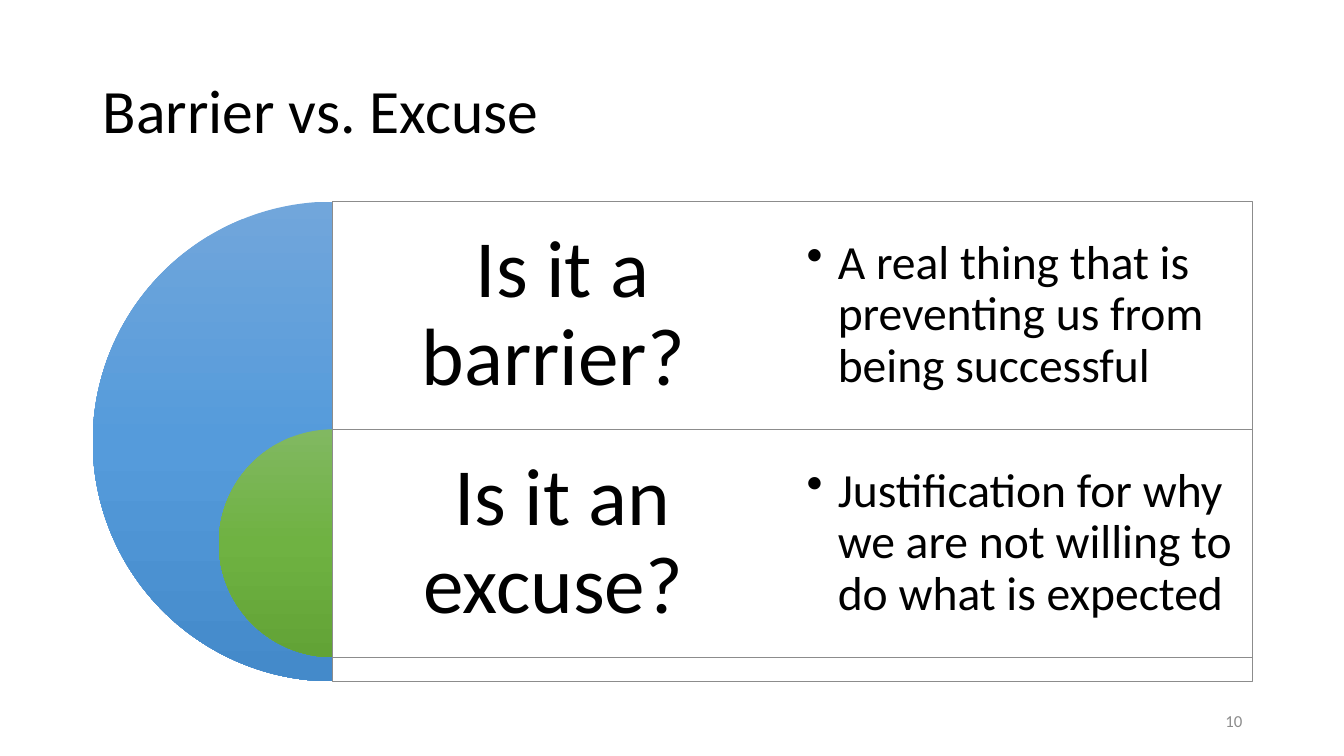
"""Build the "Barrier vs. Excuse" comparison slide."""
from copy import deepcopy
from dataclasses import dataclass

from lxml import etree
from pptx import Presentation
from pptx.dml.color import RGBColor
from pptx.enum.shapes import MSO_SHAPE
from pptx.enum.text import MSO_ANCHOR, PP_ALIGN
from pptx.oxml.ns import qn
from pptx.shapes.autoshape import Shape
from pptx.slide import Slide
from pptx.text.text import TextFrame
from pptx.util import Pt

PIE, RECTANGLE = MSO_SHAPE.PIE, MSO_SHAPE.RECTANGLE
MIDDLE = MSO_ANCHOR.MIDDLE
LEFT, CENTER, RIGHT = PP_ALIGN.LEFT, PP_ALIGN.CENTER, PP_ALIGN.RIGHT

PX = 9144
FONT = "Calibri"
BLACK = RGBColor(0x00, 0x00, 0x00)
WHITE = RGBColor(0xFF, 0xFF, 0xFF)
GREY = RGBColor(0x8C, 0x8C, 0x8C)
BLUES = (RGBColor(0x71, 0xA6, 0xDB), RGBColor(0x55, 0x9B, 0xDB), RGBColor(0x44, 0x8A, 0xCA))
GREENS = (RGBColor(0x81, 0xB8, 0x61), RGBColor(0x6F, 0xB2, 0x42), RGBColor(0x62, 0xA3, 0x36))

AXIS_X, TOP = 330, 200
COLUMN_W, ROW_H = 456, 226
HEADING_INSET, DETAIL_INSET, BULLET_INDENT = 24, 14, 31


@dataclass(frozen=True)
class Topic:
    heading: str
    detail: str
    diameter: int
    gradient: tuple[RGBColor, RGBColor, RGBColor]


TOPICS = (
    Topic("Is it a barrier? ", "A real thing that is preventing us from being successful",
          476, BLUES),
    Topic("Is it an excuse? ", "Justification for why we are not willing to do what is expected",
          ROW_H, GREENS),
)


def write(frame: TextFrame, text: str, size: int, color: RGBColor, align: PP_ALIGN,
          line_spacing: float = 0.9, bullet: bool = False) -> None:
    """Put one formatted run into a vertically centred frame."""
    frame.word_wrap = True
    frame.vertical_anchor = MIDDLE
    paragraph = frame.paragraphs[0]
    if bullet:
        properties = paragraph._p.get_or_add_pPr()
        properties.set("marL", str(BULLET_INDENT * PX))
        properties.set("indent", str(-BULLET_INDENT * PX))
        etree.SubElement(properties, qn("a:buChar")).set("char", "•")
    paragraph.alignment = align
    paragraph.line_spacing = line_spacing
    run = paragraph.add_run()
    run.text = text
    run.font.name = FONT
    run.font.size = Pt(size)
    run.font.bold = False
    run.font.color.rgb = color


def add_text_frame(slide: Slide, left: int, top: int, width: int, height: int,
                   inset: int) -> TextFrame:
    """Add a text box with equal insets."""
    box = slide.shapes.add_textbox(left * PX, top * PX, width * PX, height * PX)
    frame = box.text_frame
    frame.margin_left = frame.margin_right = inset * PX
    frame.margin_top = frame.margin_bottom = inset * PX
    return frame


def add_plain_shape(slide: Slide, kind: MSO_SHAPE, left: int, top: int,
                    width: int, height: int) -> Shape:
    """Add a preset shape without a shadow."""
    shape = slide.shapes.add_shape(kind, left * PX, top * PX, width * PX, height * PX)
    shape.shadow.inherit = False
    return shape


def add_half_disc(slide: Slide, top: int, topic: Topic) -> None:
    """Add the gradient half disc to the left of the axis."""
    size = topic.diameter
    half_disc = add_plain_shape(slide, PIE, AXIS_X - size // 2, top, size, size)
    half_disc.adjustments[0] = 54
    half_disc.adjustments[1] = 162
    half_disc.line.fill.background()
    half_disc.fill.gradient()
    half_disc.fill.gradient_angle = 270
    stop_list = half_disc._element.spPr.find(qn("a:gradFill")).find(qn("a:gsLst"))
    stop_list.append(deepcopy(stop_list[-1]))
    for index, (stop, color) in enumerate(zip(half_disc.fill.gradient_stops, topic.gradient)):
        stop.position = index / 2
        stop.color.rgb = color


def add_panel(slide: Slide, top: int, height: int) -> None:
    """Add the outlined, nearly opaque panel to the right of the axis."""
    panel = add_plain_shape(slide, RECTANGLE, AXIS_X, top, 2 * COLUMN_W, height)
    panel.fill.solid()
    panel.fill.fore_color.rgb = WHITE
    white = panel._element.spPr.find(qn("a:solidFill"))[0]
    etree.SubElement(white, qn("a:alpha")).set("val", "90000")
    panel.line.color.rgb = GREY
    panel.line.width = Pt(0.5)


def add_topic(slide: Slide, top: int, topic: Topic) -> None:
    """Add one topic with its disc, panel, heading and detail."""
    add_half_disc(slide, top, topic)
    add_panel(slide, top, topic.diameter)
    heading = add_text_frame(slide, AXIS_X, top, COLUMN_W, ROW_H, HEADING_INSET)
    write(heading, topic.heading, 58, BLACK, CENTER)
    detail = add_text_frame(slide, AXIS_X + COLUMN_W, top, COLUMN_W, ROW_H, DETAIL_INSET)
    write(detail, topic.detail, 34, BLACK, LEFT, bullet=True)


def main() -> None:
    """Build and save the slide."""
    deck = Presentation()
    deck.slide_width, deck.slide_height = 1333 * PX, 750 * PX
    slide = deck.slides.add_slide(deck.slide_layouts[5])
    title = slide.shapes.title
    title.left, title.top, title.width, title.height = 92 * PX, 40 * PX, 1150 * PX, 145 * PX
    write(title.text_frame, "Barrier vs. Excuse", 44, BLACK, LEFT)
    page_number = add_text_frame(slide, 942, 695, 300, 40, 10)
    write(page_number, "10", 12, GREY, RIGHT, line_spacing=1.0)
    for row, topic in enumerate(TOPICS):
        add_topic(slide, TOP + row * ROW_H, topic)
    deck.save("out.pptx")


if __name__ == "__main__":
    main()
